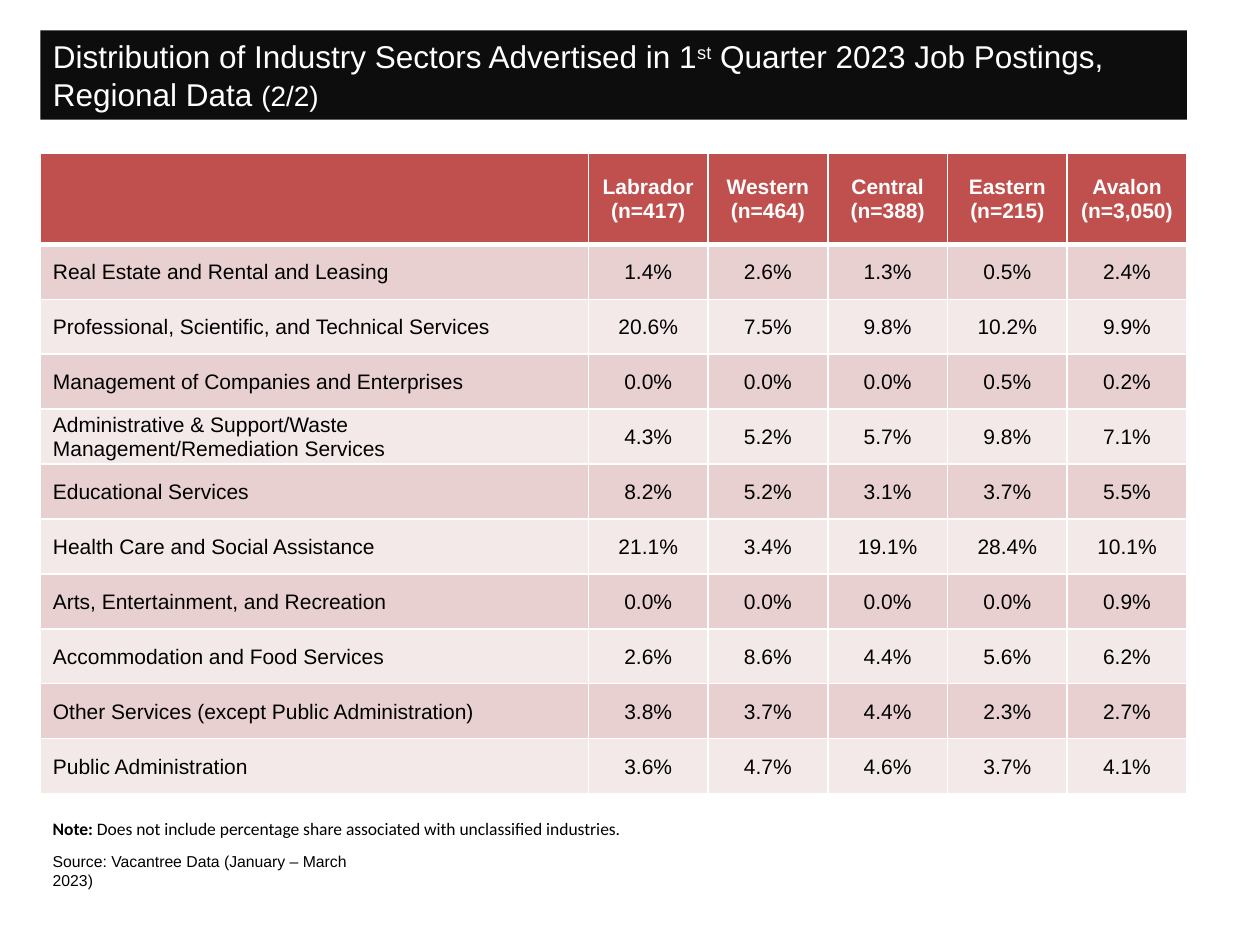
import lxml.etree
import pptx
import pptx.dml.color
import pptx.enum.text
import pptx.oxml.ns
import pptx.util

Inches = pptx.util.Inches
Pt = pptx.util.Pt
Color = pptx.dml.color.RGBColor
Align = pptx.enum.text.PP_ALIGN
Anchor = pptx.enum.text.MSO_ANCHOR
AutoSize = pptx.enum.text.MSO_AUTO_SIZE

BLACK = Color(0x00, 0x00, 0x00)
WHITE = Color(0xFF, 0xFF, 0xFF)
BANNER = Color(0x0D, 0x0D, 0x0D)
HEADER = Color(0xC0, 0x50, 0x4D)
BANDS = (Color(0xE8, 0xD0, 0xD0), Color(0xF4, 0xE9, 0xE9))

LEFT, WIDTH = 0.32, 9.1
TABLE_TOP, TABLE_HEIGHT, HEADER_HEIGHT = 1.22, 5.08, 0.72
REGION_WIDTH = 0.95

TITLE_FONT = {"name": "Arial", "size": Pt(18), "bold": False, "color": WHITE}
HEADER_FONT = {"name": "Arial", "size": Pt(12), "bold": True, "color": WHITE}
BODY_FONT = {"name": "Arial", "size": Pt(12), "bold": False, "color": BLACK}
NOTE_FONT = {"name": "Calibri", "size": Pt(10), "bold": False, "color": BLACK}
SOURCE_FONT = {"name": "Arial", "size": Pt(9), "bold": False, "color": BLACK}

REGIONS = [("Labrador", "(n=417)"), ("Western", "(n=464)"), ("Central", "(n=388)"),
           ("Eastern", "(n=215)"), ("Avalon", "(n=3,050)")]
SECTORS = [
    ("Real Estate and Rental and Leasing", (1.4, 2.6, 1.3, 0.5, 2.4)),
    ("Professional, Scientific, and Technical Services", (20.6, 7.5, 9.8, 10.2, 9.9)),
    ("Management of Companies and Enterprises", (0.0, 0.0, 0.0, 0.5, 0.2)),
    ("Administrative & Support/Waste Management/Remediation Services",
     (4.3, 5.2, 5.7, 9.8, 7.1)),
    ("Educational Services", (8.2, 5.2, 3.1, 3.7, 5.5)),
    ("Health Care and Social Assistance", (21.1, 3.4, 19.1, 28.4, 10.1)),
    ("Arts, Entertainment, and Recreation", (0.0, 0.0, 0.0, 0.0, 0.9)),
    ("Accommodation and Food Services", (2.6, 8.6, 4.4, 5.6, 6.2)),
    ("Other Services (except Public Administration)", (3.8, 3.7, 4.4, 2.3, 2.7)),
    ("Public Administration", (3.6, 4.7, 4.6, 3.7, 4.1)),
]


def set_values(target, values):
    for name, value in values.items():
        if name == "color":
            target.color.rgb = value
        else:
            setattr(target, name, value)


def write(frame, lines, font, alignment=Align.LEFT):
    for index, spans in enumerate(lines):
        para = frame.add_paragraph() if index else frame.paragraphs[0]
        set_values(para, {"alignment": alignment, "space_before": Pt(0)})
        for text, changes in spans:
            span = para.add_run()
            span.text = text
            values = {**font, **changes}
            baseline = values.pop("baseline", None)
            set_values(span.font, values)
            if baseline:
                span._r.get_or_add_rPr().set("baseline", baseline)


def add_title(page):
    title = page.shapes.title
    set_values(title, {"left": Inches(LEFT), "top": Inches(0.24),
                       "width": Inches(WIDTH), "height": Inches(0.71)})
    title.fill.solid()
    title.fill.fore_color.rgb = BANNER
    set_values(title.text_frame, {"word_wrap": True, "auto_size": AutoSize.NONE,
                                  "vertical_anchor": Anchor.MIDDLE})
    write(title.text_frame, [
        [("Distribution of Industry Sectors Advertised in 1", {}),
         ("st", {"baseline": "30000"}),
         (" Quarter 2023 Job Postings,", {})],
        [("Regional Data ", {}), ("(2/2)", {"size": Pt(16)})],
    ], TITLE_FONT)


def add_text(page, top, width, height, spans, font, wrap):
    box = page.shapes.add_textbox(Inches(LEFT), Inches(top), Inches(width), Inches(height))
    box.text_frame.word_wrap = wrap
    write(box.text_frame, [spans], font)


def set_borders(cell, top, bottom):
    properties = cell._tc.get_or_add_tcPr()
    widths = {"lnL": 1, "lnR": 1, "lnT": top, "lnB": bottom}
    for index, (side, points) in enumerate(widths.items()):
        line = lxml.etree.Element(pptx.oxml.ns.qn(f"a:{side}"), w=str(Pt(points)))
        fill = lxml.etree.SubElement(line, pptx.oxml.ns.qn("a:solidFill"))
        lxml.etree.SubElement(fill, pptx.oxml.ns.qn("a:srgbClr"), val=str(WHITE))
        properties.insert(index, line)


def fill_cell(cell, lines, font, fill, alignment, top=1, bottom=1):
    cell.vertical_anchor = Anchor.MIDDLE
    cell.fill.solid()
    cell.fill.fore_color.rgb = fill
    write(cell.text_frame, [[(line, {})] for line in lines], font, alignment)
    set_borders(cell, top, bottom)


def add_sector_table(page):
    table = page.shapes.add_table(len(SECTORS) + 1, len(REGIONS) + 1, Inches(LEFT),
                                  Inches(TABLE_TOP), Inches(WIDTH),
                                  Inches(TABLE_HEIGHT)).table
    for column in table.columns:
        column.width = Inches(REGION_WIDTH)
    table.columns[0].width = Inches(WIDTH - REGION_WIDTH * len(REGIONS))
    for row in table.rows:
        row.height = Inches((TABLE_HEIGHT - HEADER_HEIGHT) / len(SECTORS))
    table.rows[0].height = Inches(HEADER_HEIGHT)

    for column, lines in enumerate([(), *REGIONS]):
        fill_cell(table.cell(0, column), lines, HEADER_FONT, HEADER, Align.CENTER, bottom=3)
    for row, (sector, shares) in enumerate(SECTORS, 1):
        texts = [sector, *(f"{share:.1f}%" for share in shares)]
        for column, text in enumerate(texts):
            cell = table.cell(row, column)
            set_values(cell, {"margin_left": Inches(0.01 if column else 0.1),
                              "margin_right": Inches(0.01),
                              "margin_top": Inches(0.01), "margin_bottom": 0})
            fill_cell(cell, [text], BODY_FONT, BANDS[(row - 1) % 2],
                      Align.CENTER if column else Align.LEFT, top=3 if row == 1 else 1)


def main():
    deck = pptx.Presentation()
    set_values(deck, {"slide_width": Inches(10), "slide_height": Inches(7.5)})
    page = deck.slides.add_slide(deck.slide_layouts.get_by_name("Title Only"))
    add_title(page)
    add_text(page, 6.71, 2.85, 0.25,
             [("Source: Vacantree Data (January – March 2023)", {})], SOURCE_FONT, False)
    add_text(page, 6.44, 5.42, 0.27,
             [("Note: ", {"bold": True}),
              ("Does not include percentage share associated with unclassified industries.", {})],
             NOTE_FONT, True)
    add_sector_table(page)
    deck.save("out.pptx")


if __name__ == "__main__":
    main()
